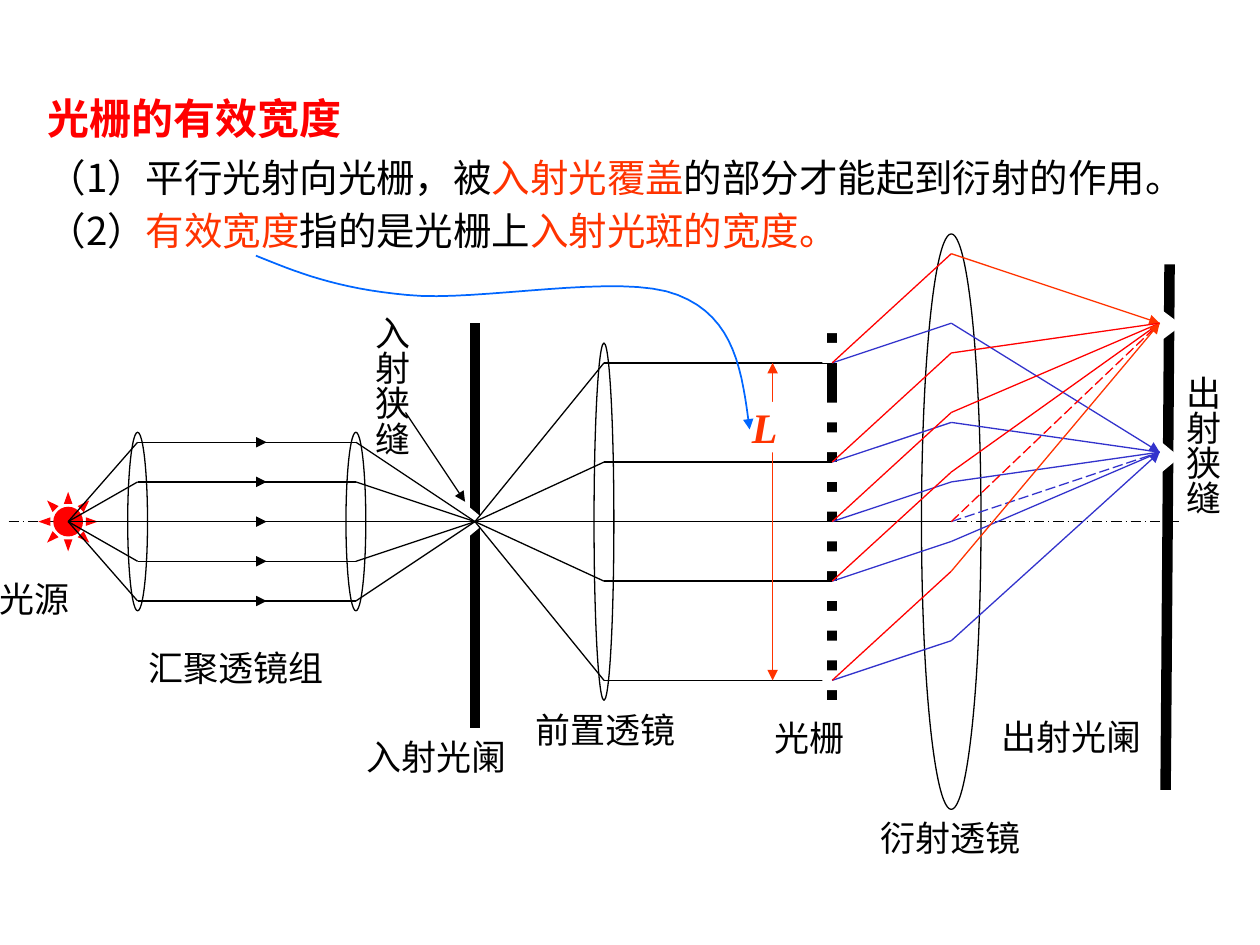
from typing import NamedTuple, Optional

from lxml.etree import SubElement
from pptx import Presentation
from pptx.dml.color import RGBColor
from pptx.enum.dml import MSO_LINE
from pptx.enum.shapes import MSO_CONNECTOR, MSO_SHAPE
from pptx.enum.text import MSO_AUTO_SIZE
from pptx.oxml.ns import qn
from pptx.util import Inches, Pt

BLACK = RGBColor(0x00, 0x00, 0x00)
WHITE = RGBColor(0xFF, 0xFF, 0xFF)
RED = RGBColor(0xFF, 0x00, 0x00)
ORANGE = RGBColor(0xFF, 0x33, 0x00)
BLUE = RGBColor(0x33, 0x33, 0xCC)
POINTER_BLUE = RGBColor(0x00, 0x66, 0xFF)
CJK_FONT = "Noto Sans CJK SC"
LATIN_FONT = "Times New Roman"

CELL = 0.315
LEFT_EDGE = -0.01
AXIS_TOP = 4.14

SOURCE, FIRST_LENS, SECOND_LENS, ENTRANCE = 1.75, 3.5, 9, 12
FRONT_LENS, GRATING, FOCUS_LENS, EXIT = 15.25, 21, 24, 29.25
GRATING_RAYS = (-4, -1.5, 0, 1.5, 4)
RED_RISE, BLUE_RISE = 2.75, 1
RED_FOCUS, BLUE_FOCUS = -5, -1.75


class Point(NamedTuple):
    column: float
    row: float


class Label(NamedTuple):
    text: str
    column: float
    row: float
    columns: float
    rows: float = 1.4
    vertical: bool = False


class Block(NamedTuple):
    preset: MSO_SHAPE
    center: Point
    columns: float
    rows: float
    fill: Optional[RGBColor] = WHITE
    rotation: float = 0


LABELS = (
    Label("光源", -0.29, 1.24, 2.44),
    Label("汇聚透镜组", 3.46, 2.98, 5.11),
    Label("入射光阑", 8.95, 5.24, 4.22),
    Label("光栅", 19.24, 4.76, 2.44),
    Label("前置透镜", 13.21, 4.54, 4.22),
    Label("出射光阑", 24.95, 4.73, 4.22),
    Label("衍射透镜", 21.9, 7.27, 4.22),
    Label("入射狭缝", 8.89, -5.49, 1.71, 3.87, True),
    Label("出射狭缝", 29.3, -4, 1.71, 3.87, True),
)
STATEMENTS = (
    (("（1）平行光射向光栅，被", BLACK), ("入射光覆盖", ORANGE), ("的部分才能起到衍射的作用。", BLACK)),
    (("（2）", BLACK), ("有效宽度", ORANGE), ("指的是光栅上", BLACK), ("入射光斑的宽度。", ORANGE)),
)
POINTER_CURVE = (
    Point(6.48, -6.7),
    Point(7.49, -6.29), Point(8.51, -5.87), Point(10.29, -5.71),
    Point(12.06, -5.52), Point(15.68, -6.29), Point(17.11, -5.71),
    Point(18.57, -5.14), Point(18.73, -3.75), Point(18.92, -2.32),
)


def across(column: float) -> int:
    return Inches(LEFT_EDGE + column * CELL)


def down(row: float) -> int:
    return Inches(AXIS_TOP + row * CELL)


def cells(count: float) -> int:
    return Inches(count * CELL)


def add_arrowheads(shape, *ends: str) -> None:
    for end in ends:
        SubElement(shape.line._get_or_add_ln(), qn(f"a:{end}"), type="triangle")


def add_line(slide, start: Point, end: Point, color=BLACK, width=0.75, dash=None, ends=()) -> None:
    line = slide.shapes.add_connector(
        MSO_CONNECTOR.STRAIGHT, across(start.column), down(start.row), across(end.column), down(end.row)
    )
    line.line.color.rgb = color
    line.line.width = Pt(width)
    if dash:
        line.line.dash_style = dash
    add_arrowheads(line, *ends)
    SubElement(line._element.spPr, qn("a:effectLst"))


def add_block(slide, block: Block):
    shape = slide.shapes.add_shape(
        block.preset,
        across(block.center.column - block.columns / 2), down(block.center.row - block.rows / 2),
        cells(block.columns), cells(block.rows),
    )
    shape.shadow.inherit = False
    shape.rotation = block.rotation
    if block.fill is None:
        shape.fill.background()
        shape.line.color.rgb = BLACK
        shape.line.width = Pt(0.75)
    else:
        shape.fill.solid()
        shape.fill.fore_color.rgb = block.fill
        shape.line.fill.background()
    return shape


def add_lens(slide, column: float, columns: float, rows: float) -> None:
    add_block(slide, Block(MSO_SHAPE.OVAL, Point(column, 0), columns, rows, None))


def add_slits(slide, numbers) -> None:
    for number in numbers:
        add_block(slide, Block(MSO_SHAPE.RECTANGLE, Point(GRATING, -5 + 0.75 * number), 0.5, 0.5))


def set_font(paragraph, size: float, color: RGBColor, latin: str = CJK_FONT, bold=False, italic=False) -> None:
    font = paragraph.font
    font.size, font.bold, font.italic = Pt(size), bold, italic
    font.color.rgb = color
    font.name = latin
    properties = paragraph._p.pPr.find(qn("a:defRPr"))
    SubElement(properties, qn("a:ea"), typeface=CJK_FONT)


def add_text_box(slide, column: float, row: float, columns: float, rows: float, wrap: bool):
    box = slide.shapes.add_textbox(across(column), down(row), cells(columns), cells(rows))
    box.text_frame.word_wrap = wrap
    return box.text_frame


def add_label(slide, label: Label) -> None:
    frame = add_text_box(slide, label.column, label.row, label.columns, label.rows, False)
    frame.auto_size = MSO_AUTO_SIZE.SHAPE_TO_FIT_TEXT
    if label.vertical:
        frame._txBody.bodyPr.set("vert", "eaVert")
    frame.text = label.text
    set_font(frame.paragraphs[0], 20, BLACK)


def add_headings(slide) -> None:
    title = add_text_box(slide, 0.92, -10.98, 26.76, 1.59, True)
    title.text = "光栅的有效宽度"
    set_font(title.paragraphs[0], 24, RED, LATIN_FONT, bold=True)
    body = add_text_box(slide, 0.92, -9.43, 29.52, 2.92, True)
    for index, statement in enumerate(STATEMENTS):
        paragraph = body.add_paragraph() if index else body.paragraphs[0]
        paragraph.space_before = Pt(4.4)
        set_font(paragraph, 22, BLACK)
        for text, color in statement:
            run = paragraph.add_run()
            run.text = text
            run.font.color.rgb = color


def add_incoming_light(slide) -> None:
    slit = Point(ENTRANCE, 0)
    for row in range(-2, 3):
        add_line(slide, Point(SOURCE, 0), Point(FIRST_LENS, row))
        add_line(slide, Point(FIRST_LENS, row), Point(SECOND_LENS, row))
        add_line(slide, Point(SECOND_LENS, row), slit)
        add_line(slide, Point(4.5, row), Point(6.75, row), ends=("tailEnd",))
    for row in GRATING_RAYS:
        add_line(slide, slit, Point(FRONT_LENS, row))
        add_line(slide, Point(FRONT_LENS, row), Point(GRATING, row))
    add_line(slide, Point(GRATING, 0), Point(FOCUS_LENS, 0))


def add_diffracted_light(slide, color, outer_color, rise: float, focus: float) -> None:
    target = Point(EXIT, focus)
    add_line(slide, Point(FOCUS_LENS, 0), target, color, dash=MSO_LINE.LONG_DASH)
    for row in GRATING_RAYS:
        outer = abs(row) == 4
        bend = Point(FOCUS_LENS, row - rise)
        add_line(slide, Point(GRATING, row), bend, color)
        add_line(slide, bend, target, outer_color if outer else color, ends=("tailEnd",) if outer else ())


def add_pointer_curve(slide, points, steps: int = 16) -> None:
    track = []
    for first in range(0, len(points) - 1, 3):
        a, b, c, d = points[first:first + 4]
        for step in range(1, steps + 1):
            t = step / steps
            weights = ((1 - t) ** 3, 3 * t * (1 - t) ** 2, 3 * t * t * (1 - t), t ** 3)
            column, row = (sum(w * v for w, v in zip(weights, values)) for values in zip(a, b, c, d))
            track.append((across(column), down(row)))
    builder = slide.shapes.build_freeform(across(points[0].column), down(points[0].row))
    builder.add_line_segments(track, close=False)
    curve = builder.convert_to_shape()
    curve.shadow.inherit = False
    curve.fill.background()
    curve.line.color.rgb = POINTER_BLUE
    curve.line.width = Pt(1)
    add_arrowheads(curve, "tailEnd")


def add_width_mark(slide) -> None:
    add_line(slide, Point(19.5, -4), Point(19.5, 4), ORANGE, ends=("headEnd", "tailEnd"))
    frame = add_block(slide, Block(MSO_SHAPE.RECTANGLE, Point(19.22, -2.38), 1.11, 1.27)).text_frame
    frame.word_wrap = False
    frame.text = "L"
    set_font(frame.paragraphs[0], 24, ORANGE, LATIN_FONT, bold=True, italic=True)


def main() -> None:
    presentation = Presentation()
    presentation.slide_width, presentation.slide_height = Inches(10), Inches(7.5)
    slide = presentation.slides.add_slide(presentation.slide_layouts[6])
    add_headings(slide)
    add_line(slide, Point(0.25, 0), Point(29.75, 0), dash=MSO_LINE.LONG_DASH_DOT)
    add_line(slide, Point(GRATING, -5), Point(GRATING, 5), width=6)
    add_slits(slide, range(3, 12))
    add_line(slide, Point(ENTRANCE, -5), Point(ENTRANCE, 5.2), width=6)
    add_block(slide, Block(MSO_SHAPE.ISOSCELES_TRIANGLE, Point(11.92, 0), 1.25, 0.75, rotation=90))
    add_block(slide, Block(MSO_SHAPE.SUN, Point(SOURCE, 0), 1.5, 1.5, RED))
    for column in (FIRST_LENS, SECOND_LENS):
        add_lens(slide, column, 0.5, 4.5)
    add_lens(slide, FRONT_LENS, 0.5, 9)
    add_lens(slide, FOCUS_LENS, 1.5, 14.5)
    add_incoming_light(slide)
    add_line(slide, Point(29.5, -6.48), Point(29.4, 6.76), width=6)
    add_block(slide, Block(MSO_SHAPE.ISOSCELES_TRIANGLE, Point(29.38, -1.62), 1.25, 0.75, rotation=90))
    add_block(slide, Block(MSO_SHAPE.ISOSCELES_TRIANGLE, Point(29.56, -4.95), 0.75, 0.5, rotation=90))
    add_slits(slide, (0, 1, 12, 13))
    add_diffracted_light(slide, BLUE, BLUE, BLUE_RISE, BLUE_FOCUS)
    add_diffracted_light(slide, RED, ORANGE, RED_RISE, RED_FOCUS)
    add_width_mark(slide)
    for label in LABELS:
        add_label(slide, label)
    add_line(slide, Point(10.25, -2.75), Point(11.75, -0.5), ends=("tailEnd",))
    add_pointer_curve(slide, POINTER_CURVE)
    presentation.save("out.pptx")


if __name__ == "__main__":
    main()
